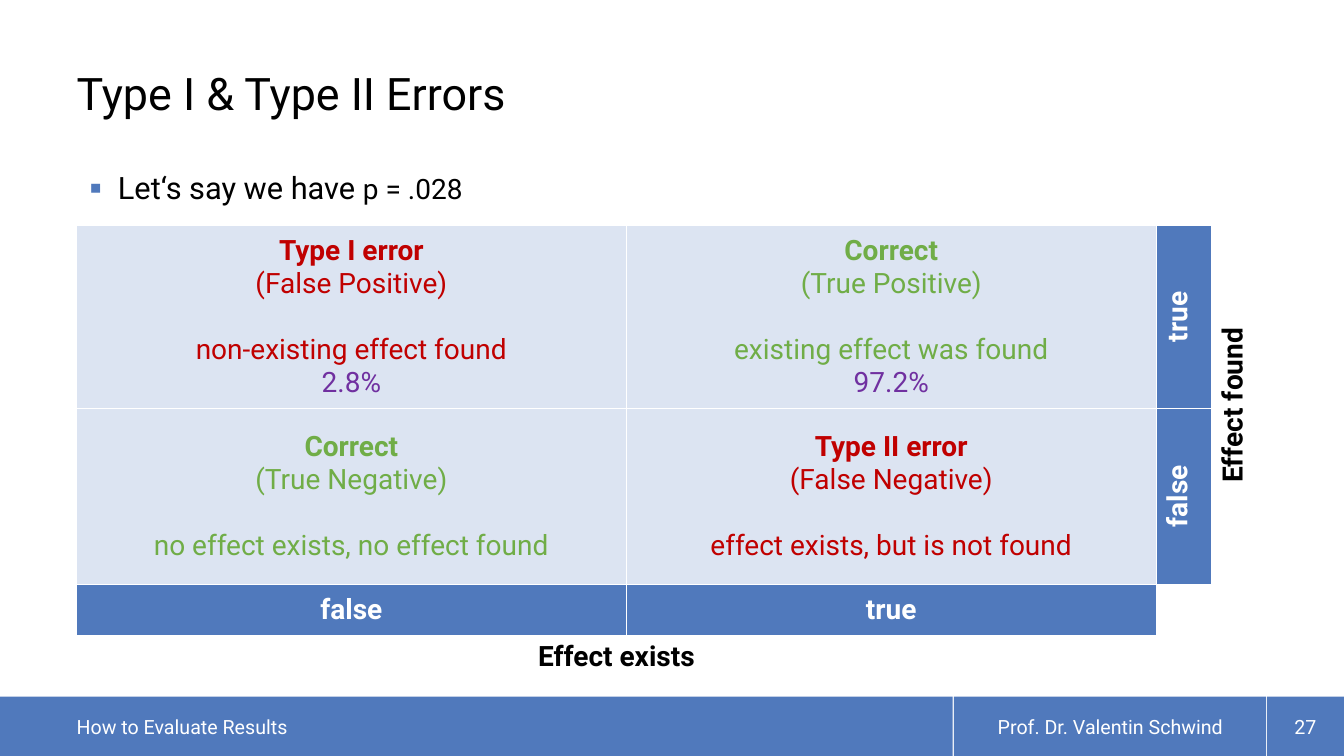
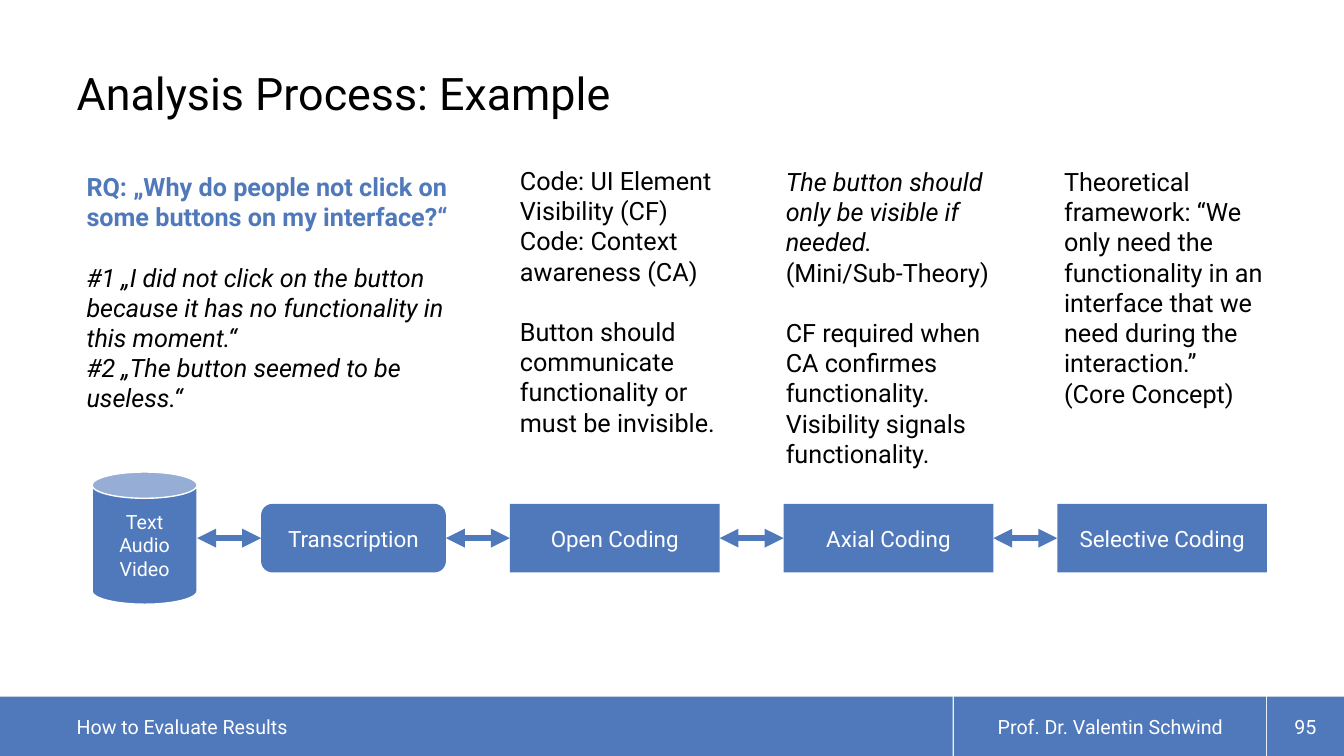
"""Build two lecture slides on evaluating results: an error table and a coding process."""
from dataclasses import dataclass
from itertools import pairwise

from lxml.etree import SubElement
from pptx import Presentation
from pptx.dml.color import RGBColor
from pptx.enum.dml import MSO_LINE
from pptx.enum.shapes import MSO_CONNECTOR, MSO_SHAPE
from pptx.enum.text import MSO_ANCHOR, MSO_AUTO_SIZE, PP_ALIGN
from pptx.oxml.ns import qn
from pptx.util import Pt


@dataclass(frozen=True)
class Theme:
    font: str = "Roboto"
    blue: str = "5079BC"
    pale: str = "DCE4F2"
    white: str = "FFFFFF"
    black: str = "000000"
    red: str = "C00000"
    green: str = "70AD47"
    purple: str = "7030A0"
    title: int = 32
    bullet: int = 22
    table: int = 20
    body: int = 18
    box: int = 16
    small: int = 14


@dataclass(frozen=True)
class Line:
    text: str
    color: str = Theme.black
    bold: bool = False
    italic: bool = False
    gap: float = 0


THEME = Theme()
WIDTH, HEIGHT = 960, 540
MARGIN = 54.7
CONTENT_WIDTH = 850.3
CONTENT_TOP = 114.5
FOOTER_TOP, FOOTER_HEIGHT = 497.5, 42.5
AUTHOR_LEFT, NUMBER_LEFT = 681.4, 905
BAND_GAP = 0.8
TABLE_GAP, BODY_GAP = 23.5, 21.5


def rgb(color):
    return RGBColor.from_string(color)


def place(shape, left, top, width, height):
    shape.left, shape.top, shape.width, shape.height = map(Pt, (left, top, width, height))


def set_insets(frame, left=0, top=0, right=0, bottom=0):
    frame.margin_left, frame.margin_top = Pt(left), Pt(top)
    frame.margin_right, frame.margin_bottom = Pt(right), Pt(bottom)


def add_run(paragraph, line, size):
    run = paragraph.add_run()
    run.text = line.text
    run.font.name = THEME.font
    run.font.size = Pt(size)
    run.font.bold = line.bold
    run.font.italic = line.italic
    run.font.color.rgb = rgb(line.color)


def write_lines(frame, lines, size, alignment=PP_ALIGN.LEFT):
    for index, line in enumerate(lines):
        paragraph = frame.add_paragraph() if index else frame.paragraphs[0]
        paragraph.alignment = alignment
        if line.gap:
            paragraph.space_before = Pt(line.gap)
        add_run(paragraph, line, size)


def add_text(slide, box, lines, size, alignment=PP_ALIGN.LEFT):
    shape = slide.shapes.add_textbox(*map(Pt, box))
    shape.text_frame.word_wrap = True
    write_lines(shape.text_frame, lines, size, alignment)
    return shape


def add_block(slide, preset, box, lines=(), size=THEME.box):
    shape = slide.shapes.add_shape(preset, *map(Pt, box))
    shape.shadow.inherit = False
    shape.fill.solid()
    shape.fill.fore_color.rgb = rgb(THEME.blue)
    shape.line.fill.background()
    shape.text_frame.vertical_anchor = MSO_ANCHOR.MIDDLE
    write_lines(shape.text_frame, lines, size, PP_ALIGN.CENTER)
    return shape


def add_double_arrow(slide, start, end, y):
    arrow = slide.shapes.add_connector(MSO_CONNECTOR.STRAIGHT, Pt(start), Pt(y), Pt(end), Pt(y))
    arrow.line.color.rgb = rgb(THEME.blue)
    arrow.line.width = Pt(4.5)
    arrow.line.dash_style = MSO_LINE.SOLID
    outline = arrow.line._get_or_add_ln()
    for tag in ("a:headEnd", "a:tailEnd"):
        SubElement(outline, qn(tag), type="triangle")
    SubElement(arrow.element.spPr, qn("a:effectLst"))


def format_master(presentation, slide):
    master = presentation.slide_master
    title, body = list(master.placeholders)[:2]
    place(title, MARGIN, 9.4, CONTENT_WIDTH, 76.3)
    place(body, MARGIN, CONTENT_TOP, CONTENT_WIDTH, 368.6)
    set_insets(title.text_frame)
    title.text_frame.vertical_anchor = MSO_ANCHOR.BOTTOM
    for placeholder in (title, body):
        placeholder.text_frame.auto_size = MSO_AUTO_SIZE.NONE
    edges = (0, AUTHOR_LEFT, NUMBER_LEFT, WIDTH + BAND_GAP)
    for index, (left, right) in enumerate(pairwise(edges)):
        box = (left, FOOTER_TOP, right - left - BAND_GAP, FOOTER_HEIGHT)
        band = add_block(slide, MSO_SHAPE.RECTANGLE, box)
        band.element.nvSpPr.cNvPr.set("id", str(100 + index))
        band.name = f"Footer band {index + 1}"
        master.shapes.element.append(band.element)


def add_title(slide, text):
    paragraph = slide.shapes.title.text_frame.paragraphs[0]
    paragraph.alignment = PP_ALIGN.LEFT
    paragraph.line_spacing = 0.9
    add_run(paragraph, Line(text), THEME.title)


def add_footer(slide, number):
    labels = (
        ("How to Evaluate Results", MARGIN, AUTHOR_LEFT, PP_ALIGN.LEFT),
        ("Prof. Dr. Valentin Schwind", AUTHOR_LEFT, NUMBER_LEFT, PP_ALIGN.CENTER),
        (number, NUMBER_LEFT, WIDTH, PP_ALIGN.CENTER),
    )
    for text, left, right, alignment in labels:
        box = (left, FOOTER_TOP, right - left, FOOTER_HEIGHT)
        label = add_text(slide, box, [Line(text, THEME.white)], THEME.small, alignment)
        set_insets(label.text_frame)
        label.text_frame.vertical_anchor = MSO_ANCHOR.MIDDLE


def add_bullet(paragraph):
    properties = paragraph._p.get_or_add_pPr()
    properties.set("marL", str(Pt(22.3)))
    properties.set("indent", str(Pt(-20.2)))
    color = SubElement(properties, qn("a:buClr"))
    SubElement(color, qn("a:srgbClr"), val=THEME.blue)
    SubElement(properties, qn("a:buFont"), typeface=THEME.font)
    SubElement(properties, qn("a:buChar"), char="▪")
    paragraph.line_spacing = 1.1
    paragraph.space_before = Pt(0)
    paragraph.space_after = Pt(4)


def format_cell(cell, fill):
    properties = cell._tc.get_or_add_tcPr()
    for side in ("L", "R", "T", "B"):
        border = SubElement(properties, qn(f"a:ln{side}"), w=str(Pt(1)))
        SubElement(SubElement(border, qn("a:solidFill")), qn("a:srgbClr"), val=THEME.white)
    cell.fill.solid()
    cell.fill.fore_color.rgb = rgb(fill)


def fill_cell(cell, lines, vertical=False, anchor=MSO_ANCHOR.MIDDLE):
    write_lines(cell.text_frame, lines, THEME.table, PP_ALIGN.CENTER)
    cell.vertical_anchor = anchor
    if vertical:
        cell._tc.get_or_add_tcPr().set("vert", "vert270")


def outcome(color, heading, kind, meaning, share=None):
    lines = [
        Line(heading, color, bold=True),
        Line(kind, color),
        Line(meaning, color, gap=TABLE_GAP),
    ]
    return lines + [Line(share, THEME.purple)] if share else lines


def add_error_table(slide):
    columns, rows = (392.6, 378.7, 39.4, 39.6), (130.3, 126, 36.5, 36.5)
    frame = slide.shapes.add_table(
        len(rows), len(columns), Pt(MARGIN), Pt(161.3), Pt(sum(columns)), Pt(sum(rows)))
    table = frame.table
    table.first_row = table.horz_banding = False
    for column, width in zip(table.columns, columns):
        column.width = Pt(width)
    for row, height in zip(table.rows, rows):
        row.height = Pt(height)
    fills = (
        (THEME.pale, THEME.pale, THEME.blue, THEME.white),
        (THEME.pale, THEME.pale, THEME.blue, THEME.white),
        (THEME.blue, THEME.blue, THEME.white, THEME.white),
        (THEME.white,) * 4,
    )
    for row, row_fills in enumerate(fills):
        for column, fill in enumerate(row_fills):
            format_cell(table.cell(row, column), fill)
    table.cell(0, 3).merge(table.cell(1, 3))
    table.cell(3, 0).merge(table.cell(3, 1))

    outcomes = (
        (outcome(THEME.red, "Type I error", "(False Positive)",
                 "non-existing effect found", "2.8%"),
         outcome(THEME.green, "Correct", "(True Positive)",
                 "existing effect was found", "97.2%")),
        (outcome(THEME.green, "Correct", "(True Negative)",
                 "no effect exists, no effect found"),
         outcome(THEME.red, "Type II error", "(False Negative)",
                 "effect exists, but is not found")),
    )
    for row, row_outcomes in enumerate(outcomes):
        for column, lines in enumerate(row_outcomes):
            fill_cell(table.cell(row, column), lines)
    for index, text in enumerate(("true", "false")):
        heading = [Line(text, THEME.white, bold=True)]
        fill_cell(table.cell(index, 2), heading, True, MSO_ANCHOR.TOP)
        fill_cell(table.cell(2, 1 - index), heading)
    fill_cell(table.cell(0, 3), [Line("Effect found", bold=True)], True, MSO_ANCHOR.TOP)
    fill_cell(table.cell(3, 0), [Line("Effect exists", bold=True)], anchor=MSO_ANCHOR.TOP)


def build_error_slide(slide):
    add_title(slide, "Type I & Type II Errors")
    add_footer(slide, "27")
    paragraph = slide.placeholders[1].text_frame.paragraphs[0]
    add_bullet(paragraph)
    add_run(paragraph, Line("Let‘s say we have "), THEME.bullet)
    add_run(paragraph, Line("p = .028"), THEME.table)
    add_error_table(slide)


def add_process(slide):
    center, gap, left = 384.4, 45.7, 65.8
    steps = (
        (MSO_SHAPE.CAN, 75, 94.4, ("Text", "Audio", "Video"), THEME.small),
        (MSO_SHAPE.ROUNDED_RECTANGLE, 132, 49, ("Transcription",), THEME.box),
        (MSO_SHAPE.RECTANGLE, 149.8, 49, ("Open Coding",), THEME.box),
        (MSO_SHAPE.RECTANGLE, 149.8, 49, ("Axial Coding",), THEME.box),
        (MSO_SHAPE.RECTANGLE, 149.8, 49, ("Selective Coding",), THEME.box),
    )
    for index, (preset, width, height, texts, size) in enumerate(steps):
        if index:
            add_double_arrow(slide, left - gap, left, center)
        lines = [Line(text, THEME.white) for text in texts]
        shape = add_block(slide, preset, (left, center - height / 2, width, height), lines, size)
        if preset == MSO_SHAPE.CAN:
            shape.line.color.rgb = rgb(THEME.white)
            shape.line.width = Pt(1)
        left += width + gap


def build_process_slide(slide):
    add_title(slide, "Analysis Process: Example")
    add_footer(slide, "95")
    notes = (
        (MARGIN, 118.8, 278, 203.8, [
            Line("RQ: „Why do people not click on some buttons on my interface?“",
                 THEME.blue, bold=True),
            Line("#1 „I did not click on the button because it has no functionality "
                 "in this moment.“", italic=True, gap=BODY_GAP),
            Line("#2 „The button seemed to be useless.“", italic=True)]),
        (364.3, CONTENT_TOP, 167.8, 203.8, [
            Line("Code: UI Element Visibility (CF)"),
            Line("Code: Context awareness (CA)"),
            Line("Button should communicate functionality or must be invisible.",
                 gap=BODY_GAP)]),
        (554.2, 115.2, 167.8, 225.4, [
            Line("The button should only be visible if needed.", italic=True),
            Line("(Mini/Sub-Theory)"),
            Line("CF required when CA confirmes functionality. "
                 "Visibility signals functionality.", gap=BODY_GAP)]),
        (753, 115.2, 167.8, 181.4, [
            Line("Theoretical framework: “We only need the functionality in an interface "
                 "that we need during the interaction.”"),
            Line("(Core Concept)")]),
    )
    for *box, lines in notes:
        add_text(slide, box, lines, THEME.body)
    add_process(slide)


def main():
    presentation = Presentation()
    presentation.slide_width, presentation.slide_height = Pt(WIDTH), Pt(HEIGHT)
    layouts = presentation.slide_layouts
    error_slide = presentation.slides.add_slide(layouts.get_by_name("Title and Content"))
    process_slide = presentation.slides.add_slide(layouts.get_by_name("Title Only"))
    format_master(presentation, error_slide)
    build_error_slide(error_slide)
    build_process_slide(process_slide)
    presentation.save("out.pptx")


if __name__ == "__main__":
    main()
